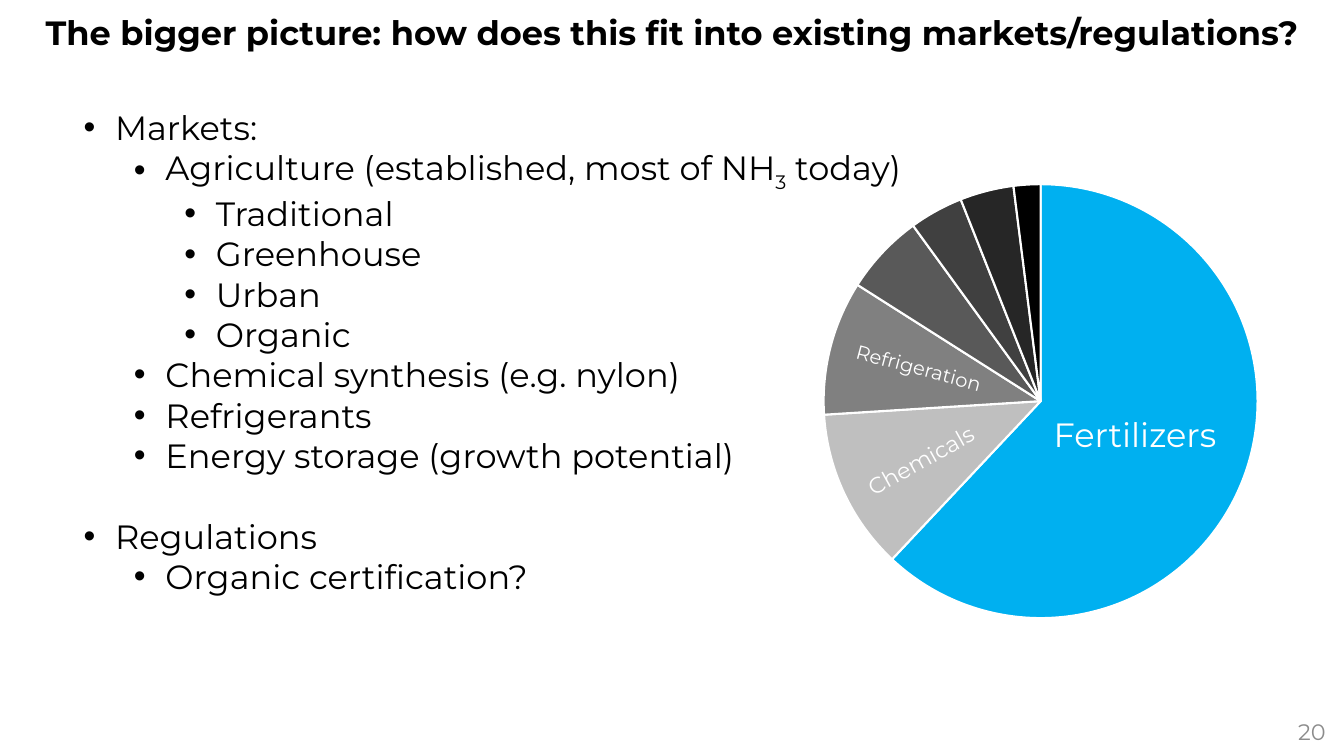
import pptx
import pptx.chart.data
import pptx.dml.color
import pptx.enum.chart
import pptx.enum.text
import pptx.oxml
import pptx.oxml.ns
import pptx.util

Pt = pptx.util.Pt
ALIGN = pptx.enum.text.PP_ALIGN
ANCHOR = pptx.enum.text.MSO_ANCHOR

# Content
COLORS = {"black": "000000", "white": "FFFFFF", "page": "8C8C8C"}
FONT = "Montserrat"
TITLE = "The bigger picture: how does this fit into existing markets/regulations?"
PAGE = "20"
# Outline: level, then text pieces (every second piece is a subscript)
OUTLINE = [
    (0, ["Markets:"]),
    (1, ["Agriculture (established, most of NH", "3", " today)"]),
    (2, ["Traditional"]),
    (2, ["Greenhouse"]),
    (2, ["Urban"]),
    (2, ["Organic"]),
    (1, ["Chemical synthesis (e.g. nylon)"]),
    (1, ["Refrigerants"]),
    (1, ["Energy storage (growth potential)"]),
    (0, ["Regulations"]),
    (1, ["Organic certification?"]),
]
# Ammonia uses: share in percent, slice colour
USES = [(62, "00B0F0"), (12, "BFBFBF"), (10, "808080"), (6, "595959"),
        (4, "404040"), (4, "262626"), (2, "000000")]
# Slice labels: text, box, size, rotation
SLICE_LABELS = [
    ("Fertilizers", (735.8, 292.3, 149.8, 36), 24, 0),
    ("Chemicals", (595.4, 315.4, 124.6, 26.6), 16, 331),
    ("Refrigeration", (578.2, 250.6, 156.2, 24.5), 14, 15),
]
LEVEL_STEP, HANG, SECTION_GAP = 36, 22.5, 29
CHART_BOX = (527, 121.7, 432.7, 329.8)
PIE_DIAMETER = 310


def rgb(value):
    return pptx.dml.color.RGBColor.from_string(value)


def style(run, size, color, bold=False):
    run.font.name = FONT
    run.font.size = Pt(size)
    run.font.bold = bold
    run.font.color.rgb = rgb(COLORS[color])


def add_box(slide, box, anchor=ANCHOR.TOP):
    area = slide.shapes.add_textbox(*map(Pt, box))
    area.text_frame.word_wrap = True
    area.text_frame.vertical_anchor = anchor
    return area


def add_line(slide, text, box, size, color, align, anchor=ANCHOR.TOP, bold=False):
    area = add_box(slide, box, anchor)
    area.text_frame.text = text
    line = area.text_frame.paragraphs[0]
    line.alignment = align
    style(line.runs[0], size, color, bold)
    return area


def add_bullet(paragraph, level):
    props = paragraph._p.get_or_add_pPr()
    props.set("marL", str(Pt(HANG + LEVEL_STEP * level)))
    props.set("indent", str(-Pt(HANG)))
    for tag, key, value in (("buFont", "typeface", "Arial"), ("buChar", "char", "•")):
        mark = pptx.oxml.parse_xml(f'<a:{tag} {pptx.oxml.ns.nsdecls("a")}/>')
        mark.set(key, value)
        props.append(mark)


def add_outline(slide):
    frame = add_box(slide, (52.6, 72.7, 854, 356.4)).text_frame
    for index, (level, pieces) in enumerate(OUTLINE):
        item = frame.add_paragraph() if index else frame.paragraphs[0]
        item.level = level
        if index and level == 0:
            item.space_before = Pt(SECTION_GAP)
        add_bullet(item, level)
        for position, piece in enumerate(pieces):
            run = item.add_run()
            run.text = piece
            style(run, 24, "black")
            if position % 2:
                run._r.get_or_add_rPr().set("baseline", "-25000")


def add_pie(slide):
    data = pptx.chart.data.CategoryChartData()
    data.categories = [str(number + 1) for number in range(len(USES))]
    data.add_series("Series 1", [share for share, _ in USES])
    pie = slide.shapes.add_chart(
        pptx.enum.chart.XL_CHART_TYPE.PIE, *map(Pt, CHART_BOX), data).chart
    pie.has_legend = False
    pie.has_title = False
    pie.font.name = "Calibri"
    pie.font.size = Pt(10)
    pie.font.color.rgb = rgb(COLORS["black"])
    pie.plots[0].vary_by_categories = True
    for index, (_, color) in enumerate(USES):
        look = pie.plots[0].series[0].points[index].format
        look.fill.solid()
        look.fill.fore_color.rgb = rgb(color)
        look.line.color.rgb = rgb(COLORS["white"])
        look.line.width = Pt(1.5)

    # Centre the pie in its frame
    width, height = (PIE_DIAMETER / side for side in CHART_BOX[2:])
    plot_area = pie._chartSpace.chart.plotArea
    for old in plot_area.findall(pptx.oxml.ns.qn("c:layout")):
        plot_area.remove(old)
    plot_area.insert(0, pptx.oxml.parse_xml(
        f'<c:layout {pptx.oxml.ns.nsdecls("c")}><c:manualLayout>'
        '<c:layoutTarget val="inner"/><c:xMode val="edge"/><c:yMode val="edge"/>'
        f'<c:x val="{(1 - width) / 2:.4f}"/><c:y val="{(1 - height) / 2:.4f}"/>'
        f'<c:w val="{width:.4f}"/><c:h val="{height:.4f}"/>'
        '</c:manualLayout></c:layout>'))


def main():
    deck = pptx.Presentation()
    deck.slide_width, deck.slide_height = Pt(960), Pt(540)
    slide = deck.slides.add_slide(deck.slide_layouts[6])

    # Page number and title
    add_line(slide, PAGE, (738, 508.3, 216, 28.8), 16, "page", ALIGN.RIGHT, ANCHOR.MIDDLE)
    title = add_line(slide, TITLE, (0, 0, 960, 49.7), 24, "black",
                     ALIGN.CENTER, ANCHOR.MIDDLE, True)
    title.text_frame.paragraphs[0].line_spacing = 0.9

    # Outline, pie and slice labels
    add_outline(slide)
    add_pie(slide)
    for text, box, size, rotation in SLICE_LABELS:
        label = add_line(slide, text, box, size, "white", ALIGN.CENTER)
        label.rotation = rotation

    deck.save("out.pptx")


if __name__ == "__main__":
    main()
